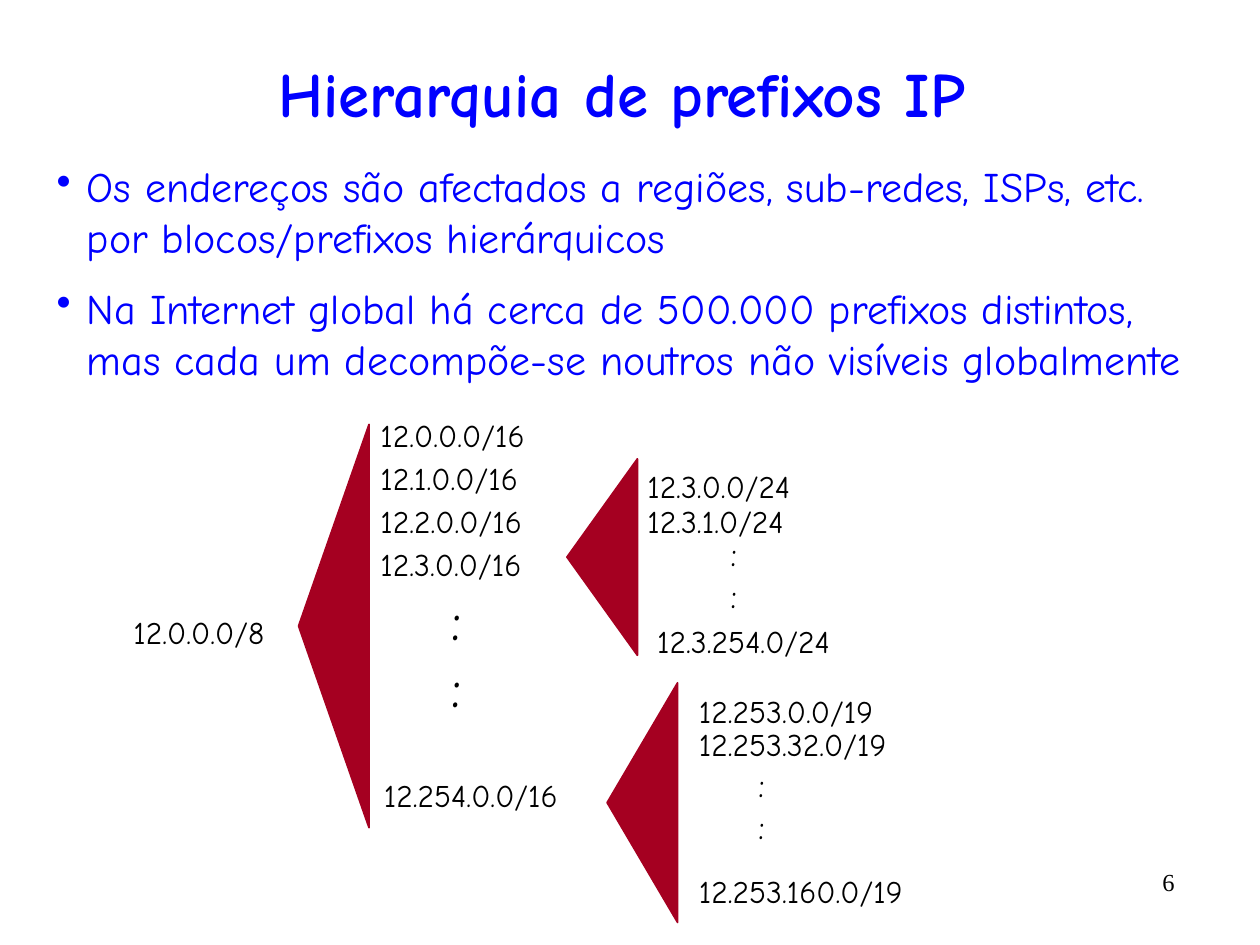
from lxml.etree import SubElement
from pptx import Presentation
from pptx.dml.color import RGBColor
from pptx.enum.shapes import MSO_SHAPE
from pptx.enum.text import MSO_ANCHOR, MSO_AUTO_SIZE, PP_ALIGN
from pptx.oxml.ns import qn
from pptx.util import Cm, Pt


def color(hex_string):
    return RGBColor.from_string(hex_string)


class PrefixSlide:
    """Holds the style and the current slide, and draws each kind of element."""

    FONT = "Comic Neue"
    BLUE = "0000FF"
    BLACK = "000000"
    RED = "A50021"
    LABEL_HEIGHT = 1.02
    FAN_DEPTH = 1.42

    def __init__(self, presentation):
        self.slide = presentation.slides.add_slide(presentation.slide_layouts[6])
        self.slide.background.fill.solid()
        self.slide.background.fill.fore_color.rgb = color("FFFFFF")

    def text(self, left, top, width, height, content, size, hex_string=BLACK,
             font=FONT, bold=False, align=PP_ALIGN.LEFT, wrap=True):
        shape = self.slide.shapes.add_textbox(Cm(left), Cm(top), Cm(width), Cm(height))
        text_frame = shape.text_frame
        text_frame.word_wrap = wrap
        text_frame.text = content
        for paragraph in text_frame.paragraphs:
            paragraph.alignment = align
            for run in paragraph.runs:
                run.font.name = font
                run.font.size = Pt(size)
                run.font.bold = bold
                run.font.color.rgb = color(hex_string)
        return text_frame

    def title(self, content):
        text_frame = self.text(0.89, 0.91, 23.29, 1.91, content, 36, self.BLUE,
                               bold=True, align=PP_ALIGN.CENTER)
        text_frame.vertical_anchor = MSO_ANCHOR.MIDDLE

    def bullets(self, items):
        text_frame = self.text(0.89, 3.12, 23.93, 4.75, "\n".join(items), 24, self.BLUE)
        for paragraph in text_frame.paragraphs:
            paragraph.space_before = Pt(12)
            properties = paragraph._p.get_or_add_pPr()
            properties.set("marL", str(Cm(0.61)))
            properties.set("indent", str(Cm(-0.61)))
            SubElement(properties, qn("a:buChar")).set("char", "•")

    def label(self, left, top, width, content):
        text_frame = self.text(left, top, width, self.LABEL_HEIGHT, content, 18, wrap=False)
        text_frame.auto_size = MSO_AUTO_SIZE.SHAPE_TO_FIT_TEXT

    def dots(self, left, top, width, height, size):
        text_frame = self.text(left, top, width, height, ":\n:", size, wrap=False)
        text_frame.auto_size = MSO_AUTO_SIZE.SHAPE_TO_FIT_TEXT

    def fan(self, center_x, center_y, span):
        shape = self.slide.shapes.add_shape(
            MSO_SHAPE.ISOSCELES_TRIANGLE,
            Cm(center_x - span / 2), Cm(center_y - self.FAN_DEPTH / 2),
            Cm(span), Cm(self.FAN_DEPTH))
        shape.rotation = 270
        shape.shadow.inherit = False
        shape.fill.solid()
        shape.fill.fore_color.rgb = color(self.RED)
        shape.line.color.rgb = color(self.RED)
        shape.line.width = Pt(1)

    def page_number(self, number):
        self.text(21.39, 17.35, 2.54, 1.07, str(number), 14,
                  font="Times New Roman", align=PP_ALIGN.RIGHT)


def main():
    presentation = Presentation()
    presentation.slide_width = Cm(25.4)
    presentation.slide_height = Cm(19.05)
    page = PrefixSlide(presentation)

    page.title("Hierarquia de prefixos IP")
    page.bullets([
        "Os endereços são afectados a regiões, sub-redes, ISPs, etc. "
        "por blocos/prefixos hierárquicos",
        "Na Internet global há cerca de 500.000 prefixos distintos, "
        "mas cada um decompõe-se noutros não visíveis globalmente",
    ])
    page.page_number(6)

    for fan in [(6.73, 12.62, 8.13), (12.14, 11.23, 3.96), (12.95, 16.18, 4.83)]:
        page.fan(*fan)

    page.label(2.44, 12.24, 3.58, "12.0.0.0/8")

    for index, width in enumerate([3.86, 3.76, 3.86, 3.86]):
        page.label(7.42, 8.26 + 0.87 * index, width, f"12.{index}.0.0/16")
    page.dots(8.86, 11.66, 0.86, 3, 32)
    page.label(7.49, 15.52, 4.65, "12.254.0.0/16")

    page.label(12.8, 9.3, 3.96, "12.3.0.0/24")
    page.label(12.8, 10, 3.86, "12.3.1.0/24")
    page.dots(14.48, 10.59, 0.74, 1.96, 20)
    page.label(13, 12.42, 4.75, "12.3.254.0/24")

    page.label(13.84, 13.82, 4.65, "12.253.0.0/19")
    page.label(13.84, 14.5, 5.03, "12.253.32.0/19")
    page.dots(15.04, 15.24, 0.74, 1.96, 20)
    page.label(13.84, 17.45, 5.31, "12.253.160.0/19")

    presentation.save("out.pptx")


if __name__ == "__main__":
    main()
